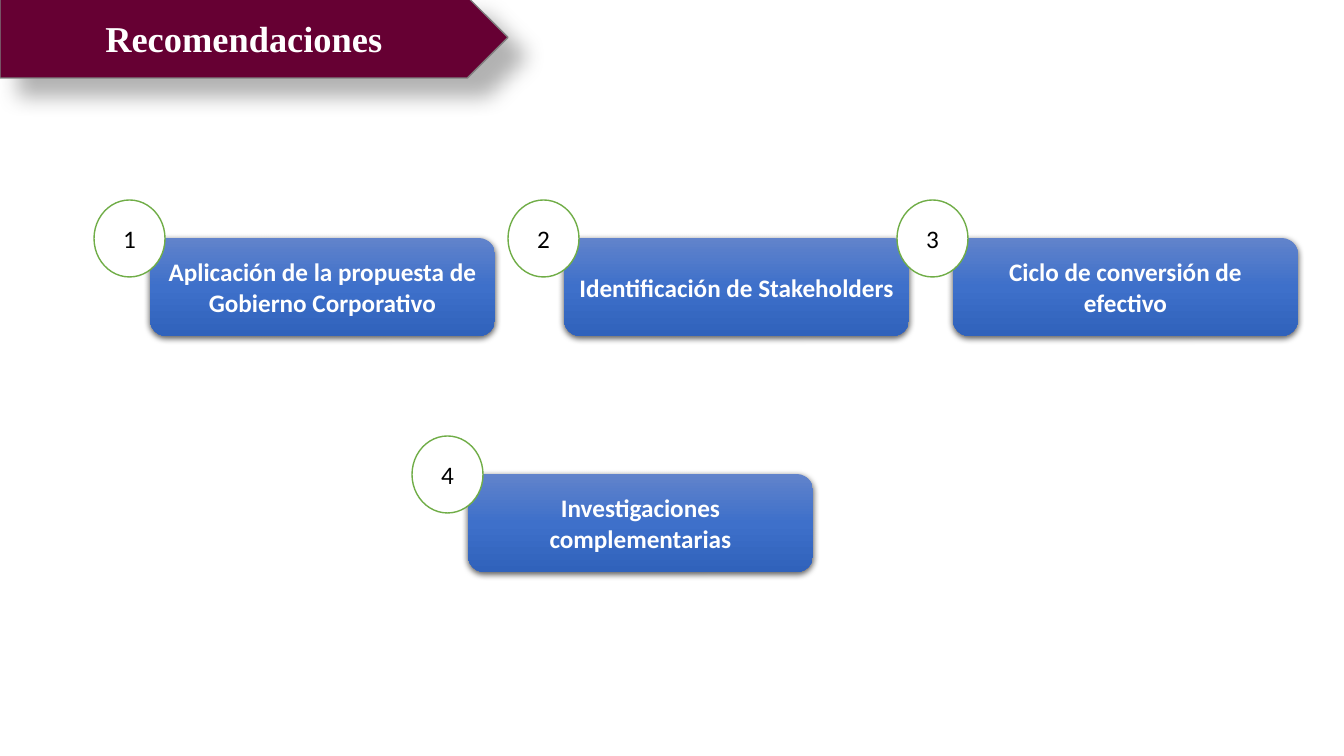
from copy import deepcopy

from lxml import etree
from pptx import Presentation
from pptx.dml.color import RGBColor
from pptx.enum.shapes import MSO_SHAPE
from pptx.enum.text import MSO_ANCHOR, PP_ALIGN
from pptx.oxml.ns import qn
from pptx.util import Pt

PLATE = MSO_SHAPE.PENTAGON
ROUND = MSO_SHAPE.ROUNDED_RECTANGLE
DISC = MSO_SHAPE.FLOWCHART_CONNECTOR
MIDDLE = MSO_ANCHOR.MIDDLE
CENTER = PP_ALIGN.CENTER

SCALE = 914400 / 100.8
WHITE = "FFFFFF"
BLUES = ("6183CB", "3E70CA", "3062BB")
TITLE = {"name": "Times New Roman", "size": Pt(26), "bold": True}
LABEL = {"name": "Calibri", "size": Pt(18), "bold": True}
DIGIT = {"name": "Calibri", "size": Pt(18), "bold": False}
ITEMS = (
    (150, 238, "Aplicación de la propuesta de Gobierno Corporativo"),
    (564, 238, "Identificación de Stakeholders"),
    (953, 238, "Ciclo de conversión de efectivo"),
    (468, 474, "Investigaciones complementarias"),
)


def px(count):
    return round(count * SCALE)


def color(text):
    return RGBColor.from_string(text)


def write(shape, text, style, tint):
    frame = shape.text_frame
    frame.text = text
    form = {
        "word_wrap": True,
        "vertical_anchor": MIDDLE,
        "margin_left": px(9),
        "margin_right": px(9),
    }
    for key, value in form.items():
        setattr(frame, key, value)
    line = frame.paragraphs[0]
    line.alignment = CENTER
    font = line.runs[0].font
    for key, value in style.items():
        setattr(font, key, value)
    font.color.rgb = color(tint)


def draw(slide, kind, box, fill=None, edge=None):
    shape = slide.shapes.add_shape(kind, *map(px, box))
    shape.shadow.inherit = False
    if fill:
        shape.fill.solid()
        shape.fill.fore_color.rgb = color(fill)
    if edge:
        shape.line.color.rgb = color(edge)
        shape.line.width = Pt(1)
    else:
        shape.line.fill.background()
    return shape


def shade(shape, alpha, blur, dist, angle):
    effects = shape.element.spPr.find(qn("a:effectLst"))
    shadow = etree.SubElement(
        effects, qn("a:outerShdw"), blurRad=str(Pt(blur)), dist=str(Pt(dist)),
        dir=str(angle * 60000), algn="ctr", rotWithShape="0")
    tint = etree.SubElement(shadow, qn("a:srgbClr"), val="000000")
    etree.SubElement(tint, qn("a:alpha"), val=str(alpha * 1000))


def blend(shape, tints):
    fill = shape.fill
    fill.gradient()
    fill.gradient_angle = 270
    stops = shape.element.spPr.find(".//" + qn("a:gsLst"))
    stops.insert(1, deepcopy(stops[0]))
    for rank, (stop, tint) in enumerate(zip(fill.gradient_stops, tints)):
        stop.color.rgb = color(tint)
        stop.position = rank / (len(tints) - 1)


def banner(slide, text):
    plate = draw(slide, PLATE, (0, -3, 508, 81), "660033", "808080")
    shade(plate, 30, 15, 18, 45)
    title = slide.shapes.title
    title.element.addprevious(plate.element)
    place = {"left": 0, "top": px(-3), "width": px(488), "height": px(81)}
    for key, value in place.items():
        setattr(title, key, value)
    write(title, text, TITLE, WHITE)


def item(slide, number, left, top, text):
    block = draw(slide, ROUND, (left, top, 345, 98))
    blend(block, BLUES)
    shade(block, 63, 4.5, 1.5, 90)
    write(block, text, LABEL, WHITE)
    badge = draw(slide, DISC, (left - 56, top - 38, 71, 77), WHITE, "70AD47")
    write(badge, str(number), DIGIT, "000000")


def main():
    deck = Presentation()
    deck.slide_width = px(1344)
    deck.slide_height = px(756)
    slide = deck.slides.add_slide(deck.slide_layouts[5])
    banner(slide, "Recomendaciones")
    for number, (left, top, text) in enumerate(ITEMS, 1):
        item(slide, number, left, top, text)
    deck.save("out.pptx")


if __name__ == "__main__":
    main()
